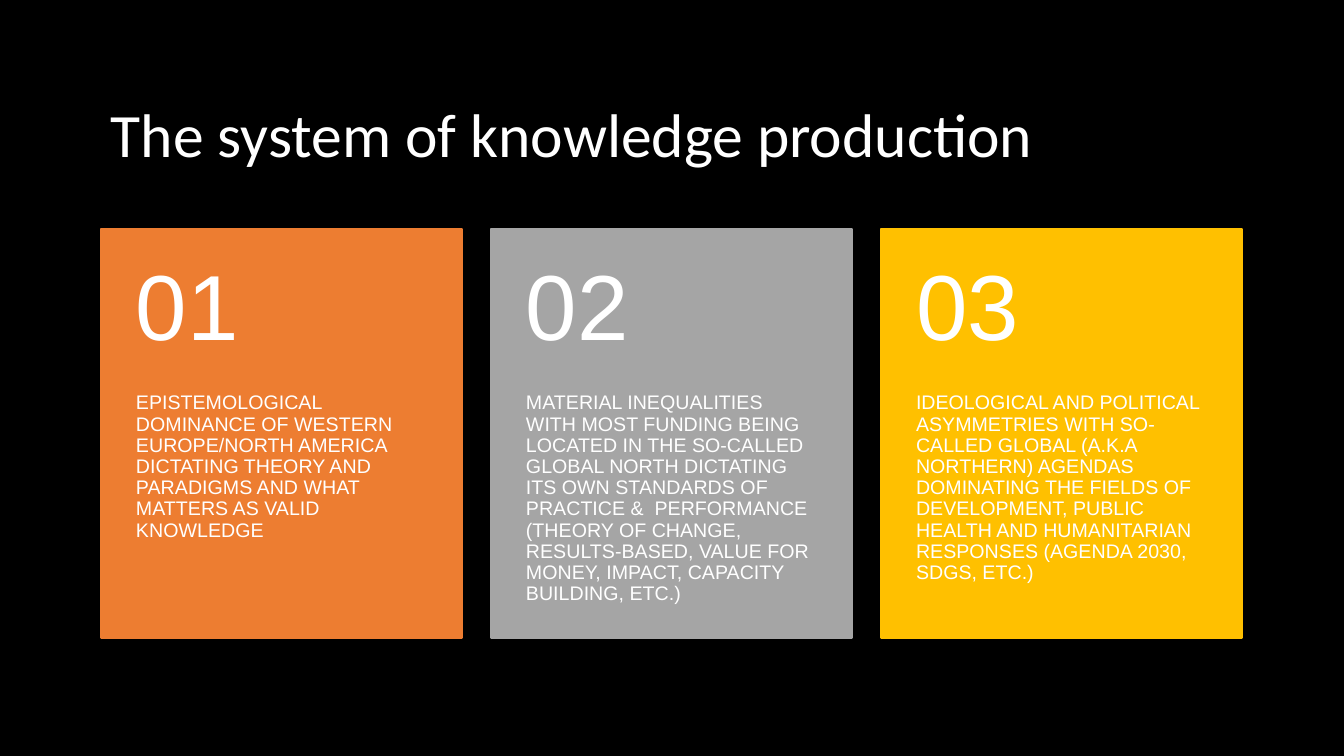
"""Build a slide with three numbered cards on how knowledge is produced."""
from dataclasses import dataclass

from pptx import Presentation
from pptx.dml.color import RGBColor as Rgb
from pptx.enum.shapes import MSO_SHAPE as Shape
from pptx.enum.text import MSO_ANCHOR as Anchor
from pptx.util import Pt

TITLE = "The system of knowledge production"
CARDS = [
    ("ED7D31", "EPISTEMOLOGICAL DOMINANCE OF WESTERN EUROPE/NORTH AMERICA "
     "DICTATING THEORY AND PARADIGMS AND WHAT MATTERS AS VALID KNOWLEDGE"),
    ("A5A5A5", "MATERIAL INEQUALITIES WITH MOST FUNDING BEING LOCATED IN THE "
     "SO-CALLED GLOBAL NORTH DICTATING ITS OWN STANDARDS OF PRACTICE &  "
     "PERFORMANCE (THEORY OF CHANGE, RESULTS-BASED, VALUE FOR MONEY, IMPACT, "
     "CAPACITY BUILDING, ETC.)"),
    ("FFC000", "IDEOLOGICAL AND POLITICAL ASYMMETRIES WITH SO-CALLED GLOBAL "
     "(A.K.A NORTHERN) AGENDAS DOMINATING THE FIELDS OF DEVELOPMENT, PUBLIC "
     "HEALTH AND HUMANITARIAN RESPONSES (AGENDA 2030, SDGS, ETC.)"),
]


@dataclass(frozen=True)
class Theme:
    """Hold the colours, fonts and type sizes."""
    back: str = "000000"
    ink: str = "FFFFFF"
    head: str = "Calibri"
    body: str = "Arial"
    title: int = 44
    number: int = 66
    text: int = 14
    line: int = 2


LOOK = Theme()
WIDE, HIGH = 1344, 756
LEFT, TOP = 101, 229
CARD_W, CARD_H, STEP = 361, 409, 390
NUM_H = 164


def px(count):
    """Turn px into EMU."""
    return round(count * 914400 / 100.8)


def write(slide, text, box, pads, font, size, anchor):
    """Add one text box with a single paragraph."""
    frame = slide.shapes.add_textbox(*map(px, box)).text_frame
    frame.word_wrap = True
    frame.vertical_anchor = anchor
    (frame.margin_left, frame.margin_top,
     frame.margin_right, frame.margin_bottom) = map(px, pads)
    para = frame.paragraphs[0]
    para.text = text
    para.line_spacing = 0.9
    para.font.name = font
    para.font.size = Pt(size)
    para.font.color.rgb = Rgb.from_string(LOOK.ink)


def add_card(slide, index, color, text):
    """Add one coloured card with its number and text."""
    left = LEFT + index * STEP
    card = slide.shapes.add_shape(
        Shape.RECTANGLE, *map(px, (left, TOP, CARD_W, CARD_H)))
    card.shadow.inherit = False
    card.fill.solid()
    card.fill.fore_color.rgb = Rgb.from_string(color)
    card.line.color.rgb = Rgb.from_string(color)
    card.line.width = Pt(LOOK.line)
    write(slide, text, (left, TOP + NUM_H, CARD_W, CARD_H - NUM_H),
          (35, 0, 35, 36), LOOK.body, LOOK.text, Anchor.TOP)
    write(slide, f"{index + 1:02}", (left, TOP, CARD_W, NUM_H),
          (35, 18, 35, 18), LOOK.body, LOOK.number, Anchor.MIDDLE)


def main():
    """Lay out the slide and save it."""
    deck = Presentation()
    deck.slide_width, deck.slide_height = px(WIDE), px(HIGH)
    slide = deck.slides.add_slide(deck.slide_layouts[6])
    fill = slide.background.fill
    fill.solid()
    fill.fore_color.rgb = Rgb.from_string(LOOK.back)
    write(slide, TITLE, (LEFT, 68, 1141, 139), (10, 5, 10, 5),
          LOOK.head, LOOK.title, Anchor.MIDDLE)
    for index, (color, text) in enumerate(CARDS):
        add_card(slide, index, color, text)
    deck.save("out.pptx")


if __name__ == "__main__":
    main()
